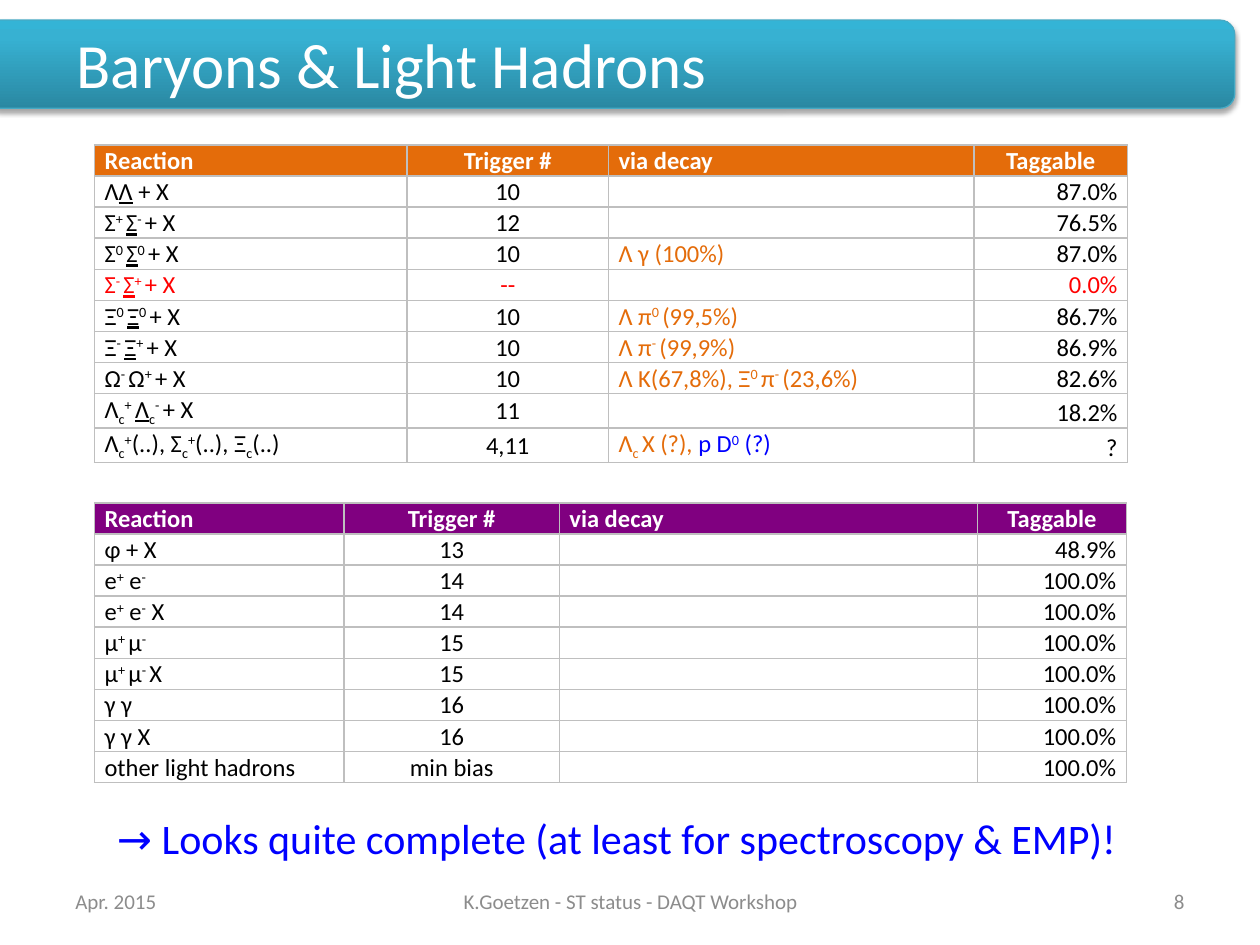
from copy import deepcopy
from lxml.etree import SubElement
from pptx import Presentation
from pptx.dml.color import RGBColor
from pptx.enum.shapes import MSO_SHAPE
from pptx.enum.text import MSO_ANCHOR, PP_ALIGN
from pptx.oxml import parse_xml
from pptx.oxml.ns import nsdecls, qn
from pptx.util import Inches, Pt

COLORS = {
    "white": "FFFFFF", "black": "000000", "red": "FF0000", "blue": "0000FF",
    "orange": "E46C0A", "purple": "800080", "grey": "8C8C8C", "border": "BFBFBF",
    "bar_dark": "2A88A2", "bar_mid": "37B1D2", "bar_light": "34B4D6", "bar_line": "46AAC5",
}
LEFT, CENTER, RIGHT = PP_ALIGN.LEFT, PP_ALIGN.CENTER, PP_ALIGN.RIGHT
MIDDLE, BOTTOM, TOP = MSO_ANCHOR.MIDDLE, MSO_ANCHOR.BOTTOM, MSO_ANCHOR.TOP


def write(tf, text, size=14, color="black", bold=False, align=LEFT, font="Calibri"):
    """Pieces are split by |; a leading ^ _ ~ @ means superscript, subscript, underline, blue from here."""
    p = tf.paragraphs[0]
    p.alignment = align
    if not text:
        SubElement(p._p, qn("a:endParaRPr")).set("sz", str(size * 100))
        return
    for piece in text.split("|"):
        mark = piece[0] if piece[0] in "^_~@" else ""
        if mark == "@":
            color = "blue"
        r = p.add_run()
        r.text = piece[len(mark):]
        r.font.size, r.font.name, r.font.bold = Pt(size), font, bold
        r.font.color.rgb = RGBColor.from_string(COLORS[color])
        if mark == "~":
            r.font.underline = True
        if mark in ("^", "_"):
            r.font._element.set("baseline", "30000" if mark == "^" else "-25000")


prs = Presentation()
prs.slide_width, prs.slide_height = Inches(10), Inches(7.5)
s = prs.slides.add_slide(prs.slide_layouts[6])

# Title bar
bar = s.shapes.add_shape(MSO_SHAPE.ROUNDED_RECTANGLE, Inches(-0.12), Inches(0.16), Inches(9.92), Inches(0.7))
bar.fill.gradient()
bar.fill.gradient_angle = 90
last_stop = bar.fill.gradient_stops[1]._gs
last_stop.addnext(deepcopy(last_stop))
for stop, (pos, name) in zip(bar.fill.gradient_stops, [(0, "bar_dark"), (0.8, "bar_mid"), (1, "bar_light")]):
    stop.position = pos
    stop.color.rgb = RGBColor.from_string(COLORS[name])
bar.line.color.rgb = RGBColor.from_string(COLORS["bar_line"])
bar.line.width = Pt(0.75)
bar._element.spPr.append(parse_xml(
    f'<a:effectLst {nsdecls("a")}><a:outerShdw blurRad="{Pt(3.1)}" dist="{Pt(1.8)}" dir="5400000" rotWithShape="0">'
    f'<a:srgbClr val="{COLORS["black"]}"><a:alpha val="35000"/></a:srgbClr></a:outerShdw></a:effectLst>'))

# Reaction tables
HEADER = ["Reaction", "Trigger #", "via decay", "Taggable"]
baryons = [
    ["Λ|~Λ| + X", "10", "", "87.0%"],
    ["Σ|^+ |~Σ|^- |+ X", "12", "", "76.5%"],
    ["Σ|^0 |~Σ|^0 |+ X", "10", "Λ γ (100%)", "87.0%"],
    ["Σ|^- |~Σ|^+ |+ X", "--", "", "0.0%"],
    ["Ξ|^0 |~Ξ|^0 |+ X", "10", "Λ π|^0 |(99,5%)", "86.7%"],
    ["Ξ|^- |~Ξ|^+ |+ X", "10", "Λ π|^- |(99,9%)", "86.9%"],
    ["Ω|^- |Ω|^+ |+ X", "10", "Λ K(67,8%), Ξ|^0 |π|^- |(23,6%)", "82.6%"],
    ["Λ|_c|^+ |~Λ|_c|^- |+ X", "11", "", "18.2%"],
    ["Λ|_c|^+|(..), Σ|_c|^+|(..), Ξ|_c|(..)", "4,11", "Λ|_c |X (?), |@p D|^0| (?)", "?"],
]
light_hadrons = [
    ["φ + X", "13", "", "48.9%"],
    ["e|^+| e|^-", "14", "", "100.0%"],
    ["e|^+| e|^-| X", "14", "", "100.0%"],
    ["μ|^+ |μ|^-", "15", "", "100.0%"],
    ["μ|^+ |μ|^- |X", "15", "", "100.0%"],
    ["γ γ", "16", "", "100.0%"],
    ["γ γ X", "16", "", "100.0%"],
    ["other light hadrons", "min bias", "", "100.0%"],
]
tables = [
    (1.15, baryons, [2.48, 1.6, 2.9, 1.22], "orange", BOTTOM),
    (3.99, light_hadrons, [1.98, 1.71, 3.32, 1.18], "purple", MIDDLE),
]
ROW_H = 0.24
for top, body, widths, head_color, value_anchor in tables:
    rows = [HEADER] + body
    table = s.shapes.add_table(len(rows), len(HEADER), Inches(0.75), Inches(top),
                               Inches(sum(widths)), Inches(ROW_H * len(rows))).table
    table.first_row = table.horz_banding = False
    for col, width in zip(table.columns, widths):
        col.width = Inches(width)
    for i, row in enumerate(rows):
        table.rows[i].height = Inches(ROW_H)
        for j, text in enumerate(row):
            cell = table.cell(i, j)
            cell.margin_left = cell.margin_right = Inches(0.08)
            cell.margin_top, cell.margin_bottom = Inches(0.01), 0
            cell.vertical_anchor = value_anchor if i and j == 3 else MIDDLE
            for side in "LRTB":
                cell._tc.get_or_add_tcPr().append(parse_xml(
                    f'<a:ln{side} {nsdecls("a")} w="{Pt(1)}"><a:solidFill>'
                    f'<a:srgbClr val="{COLORS["border"]}"/></a:solidFill></a:ln{side}>'))
            if i == 0:
                cell.fill.solid()
                cell.fill.fore_color.rgb = RGBColor.from_string(COLORS[head_color])
                write(cell.text_frame, text, color="white", bold=True, align=CENTER if j in (1, 3) else LEFT)
            else:
                cell.fill.background()
                color = "red" if row[1] == "--" else "orange" if j == 2 else "black"
                write(cell.text_frame, text, color=color, align=[LEFT, CENTER, LEFT, RIGHT][j])

# Title, conclusion and footer texts
texts = [
    ((0.51, 0.23, 8.99, 0.54), "Baryons & Light Hadrons", MIDDLE, dict(size=36, color="white")),
    ((0.83, 6.4, 8.23, 0.5), "→ ", TOP, dict(size=24, color="blue", font="Cabin")),
    ((0.5, 6.95, 2.33, 0.4), "Apr. 2015", MIDDLE, dict(size=12, color="grey")),
    ((3.42, 6.95, 3.17, 0.4), "K.Goetzen - ST status - DAQT Workshop", MIDDLE,
     dict(size=12, color="grey", align=CENTER)),
    ((7.17, 6.95, 2.33, 0.4), "8", MIDDLE, dict(size=12, color="grey", align=RIGHT)),
]
for box, text, anchor, fmt in texts:
    tf = s.shapes.add_textbox(*map(Inches, box)).text_frame
    tf.vertical_anchor = anchor
    tf.word_wrap = anchor == MIDDLE
    write(tf, text, **fmt)
    if text == "→ ":
        write(tf, "Looks quite complete (at least for spectroscopy & EMP)!", size=24, color="blue")

prs.save("out.pptx")
